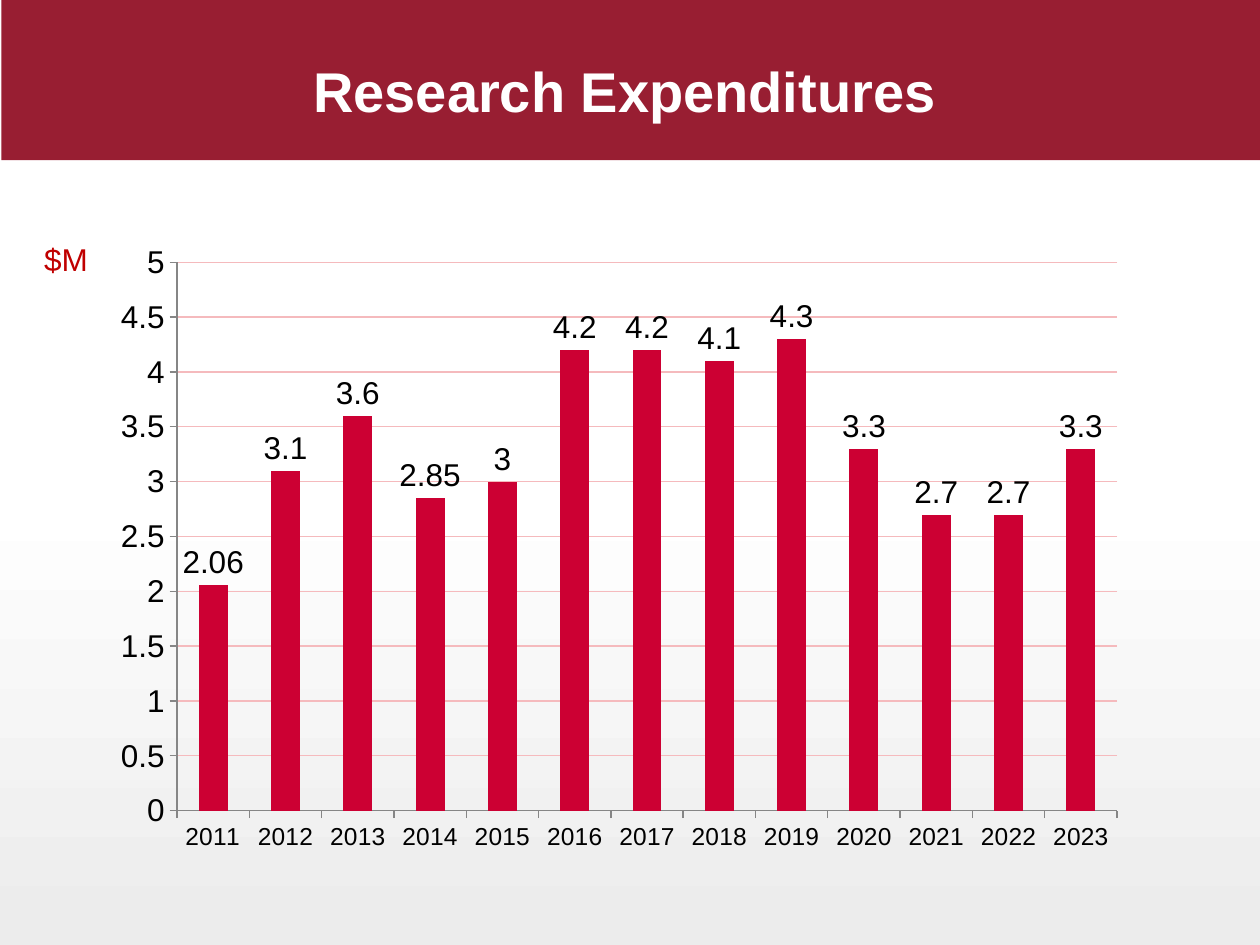
from lxml.etree import SubElement
from pptx import Presentation
from pptx.chart.data import CategoryChartData
from pptx.dml.color import RGBColor
from pptx.enum.chart import XL_CHART_TYPE, XL_LABEL_POSITION, XL_TICK_MARK
from pptx.enum.shapes import MSO_SHAPE
from pptx.enum.text import MSO_ANCHOR, MSO_AUTO_SIZE, PP_ALIGN
from pptx.oxml.ns import qn
from pptx.util import Cm, Pt

FONT = "Arial"
COLOURS = {
    "band": "981E32",
    "bar": "CC0033",
    "grid": "F5BABD",
    "axis": "868686",
    "unit": "C00000",
    "text": "000000",
    "white": "FFFFFF",
    "grey": "ECECEC",
}
FIRST_YEAR = 2011
EXPENDITURES = [2.06, 3.1, 3.6, 2.85, 3, 4.2, 4.2, 4.1, 4.3, 3.3, 2.7, 2.7, 3.3]
PLOT_AREA = {"x": 0.073, "y": 0.129, "w": 0.829, "h": 0.768}


def colour(name):
    return RGBColor.from_string(COLOURS[name])


def style_font(font, size, name, bold=False):
    font.name = FONT
    font.size = Pt(size)
    font.bold = bold
    font.color.rgb = colour(name)


def style_line(line, name):
    line.color.rgb = colour(name)
    line.width = Pt(0.75)


def add_span(para, text, size, name, bold=False):
    span = para.add_run()
    span.text = text
    style_font(span.font, size, name, bold)


def set_background(page):
    """Fade from grey at the bottom edge to white at mid-height."""
    fill = page.background.fill
    fill.gradient()
    fill.gradient_angle = 90
    for stop, name, position in zip(fill.gradient_stops, ("grey", "white"), (0.01, 0.48)):
        stop.color.rgb = colour(name)
        stop.position = position


def add_title(page, text):
    """Fill the title placeholder and lay the coloured band behind it."""
    title = page.shapes.title
    title.left, title.top, title.width, title.height = Cm(5.51), Cm(0.91), Cm(14.17), Cm(1.98)
    frame = title.text_frame
    frame.vertical_anchor = MSO_ANCHOR.MIDDLE
    para = frame.paragraphs[0]
    para.alignment = PP_ALIGN.CENTER
    para.line_spacing = 0.9
    add_span(para, text, 32, "white", bold=True)

    band = page.shapes.add_shape(MSO_SHAPE.RECTANGLE, Cm(0.03), Cm(-0.25), Cm(25.37), Cm(3.48))
    band.shadow.inherit = False
    band.fill.solid()
    band.fill.fore_color.rgb = colour("band")
    band.line.fill.background()
    title.element.addprevious(band.element)


def add_unit_label(page, text):
    box = page.shapes.add_textbox(Cm(0.64), Cm(4.72), Cm(1.4), Cm(1.02))
    frame = box.text_frame
    frame.word_wrap = False
    frame.auto_size = MSO_AUTO_SIZE.SHAPE_TO_FIT_TEXT
    add_span(frame.paragraphs[0], text, 18, "unit")


def set_plot_area(chart):
    """Fix the inner plot area as fractions of the chart frame."""
    plot_area = chart.plots[0]._element.getparent()
    layout = plot_area.find(qn("c:layout"))
    if layout is None:
        layout = SubElement(plot_area, qn("c:layout"))
        plot_area.insert(0, layout)
    manual = SubElement(layout, qn("c:manualLayout"))
    settings = {"layoutTarget": "inner", "xMode": "edge", "yMode": "edge", **PLOT_AREA}
    for tag, value in settings.items():
        SubElement(manual, qn(f"c:{tag}")).set("val", str(value))


def style_axis(axis, size):
    axis.major_tick_mark = XL_TICK_MARK.OUTSIDE
    axis.minor_tick_mark = XL_TICK_MARK.NONE
    style_font(axis.tick_labels.font, size, "text")
    style_line(axis.format.line, "axis")


def add_expenditure_chart(page):
    data = CategoryChartData()
    data.categories = [str(FIRST_YEAR + offset) for offset in range(len(EXPENDITURES))]
    data.add_series("Series 1", EXPENDITURES)
    chart = page.shapes.add_chart(
        XL_CHART_TYPE.COLUMN_CLUSTERED, Cm(1.9), Cm(3.43), Cm(22.86), Cm(14.4), data
    ).chart
    chart.has_title = False
    chart.has_legend = False
    style_font(chart.font, 18, "text")
    set_plot_area(chart)

    style_axis(chart.category_axis, 14)
    value_axis = chart.value_axis
    style_axis(value_axis, 18)
    value_axis.minimum_scale, value_axis.maximum_scale = 0, 5
    value_axis.major_unit = 0.5
    value_axis.has_major_gridlines = True
    style_line(value_axis.major_gridlines.format.line, "grid")

    plot = chart.plots[0]
    plot.gap_width = 150
    plot.vary_by_categories = False
    series = plot.series[0]
    series.format.fill.solid()
    series.format.fill.fore_color.rgb = colour("bar")
    labels = series.data_labels
    labels.show_value = True
    labels.position = XL_LABEL_POSITION.OUTSIDE_END
    style_font(labels.font, 18, "text")


def main():
    deck = Presentation()
    deck.slide_width, deck.slide_height = Cm(25.4), Cm(19.05)
    page = deck.slides.add_slide(deck.slide_layouts[5])
    set_background(page)
    add_title(page, "Research Expenditures")
    add_expenditure_chart(page)
    add_unit_label(page, "$M")
    deck.save("out.pptx")


if __name__ == "__main__":
    main()
